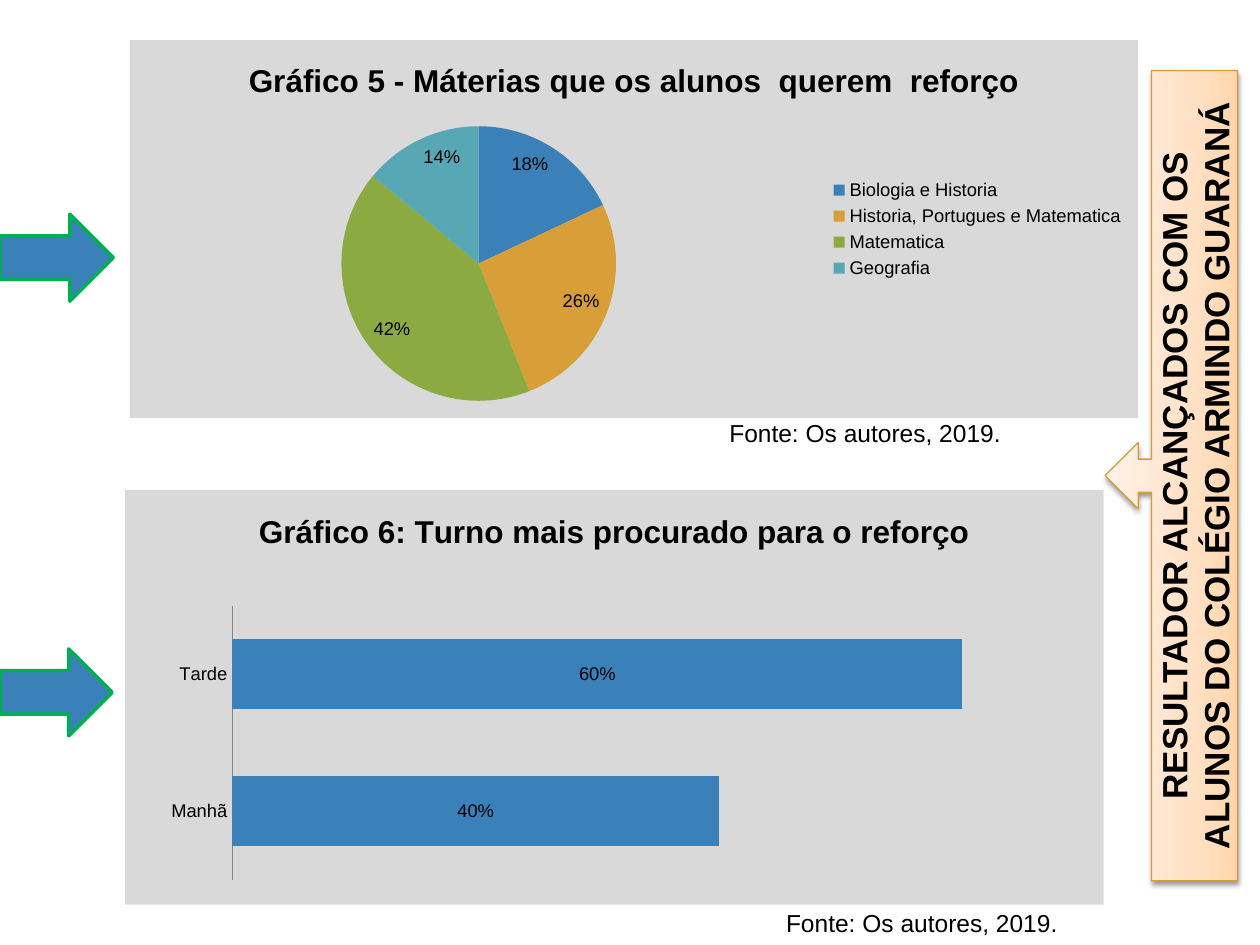
import copy
from dataclasses import dataclass

import lxml.etree
import pptx
import pptx.chart.data
import pptx.dml.color
import pptx.enum.chart
import pptx.enum.shapes
import pptx.enum.text
import pptx.oxml
import pptx.oxml.ns
import pptx.util

Pt = pptx.util.Pt
qn = pptx.oxml.ns.qn
Kind = pptx.enum.chart.XL_CHART_TYPE
Shape = pptx.enum.shapes.MSO_SHAPE
NAMESPACES = pptx.oxml.ns.nsdecls("a", "c")


@dataclass(frozen=True)
class Theme:
    font: str = "Arial"
    ink: str = "000000"
    outline: str = "0D0D0D"
    panel: str = "D9D9D9"
    axis: str = "868686"
    blue: str = "3A81BA"
    green: str = "00B050"
    border: str = "D79D34"
    slices: tuple = ("3A81BA", "D89F39", "8BAB42", "57A7B5")
    callout: tuple = ((0, "FFD6AD"), (0.35, "FFE1C5"), (1, "FFF3E9"))
    label: float = 10.5
    source: float = 14
    title: float = 18
    heading: float = 20


THEME = Theme()


def color(value):
    return pptx.dml.color.RGBColor.from_string(value)


def apply(target, values):
    for name, value in values.items():
        setattr(target, name, value)


def style_font(font, size, bold=False):
    apply(font, {"name": THEME.font, "size": Pt(size), "bold": bold})
    font.color.rgb = color(THEME.ink)


def paint(target, value):
    target.fill.solid()
    target.fill.fore_color.rgb = color(value)


def outline(shape, value, width):
    shape.line.color.rgb = color(value)
    shape.line.width = Pt(width)


def add_arrow(page, box):
    arrow = page.shapes.add_shape(Shape.RIGHT_ARROW, *map(Pt, box))
    arrow.shadow.inherit = False
    paint(arrow, THEME.blue)
    outline(arrow, THEME.green, 2)


def add_source(page, box):
    source = page.shapes.add_textbox(*map(Pt, box))
    source.text_frame.word_wrap = True
    source.text_frame.auto_size = pptx.enum.text.MSO_AUTO_SIZE.SHAPE_TO_FIT_TEXT
    span = source.text_frame.paragraphs[0].add_run()
    span.text = "Fonte: Os autores, 2019."
    style_font(span.font, THEME.source)


def add_chart(page, box, kind, title, values, number_format):
    data = pptx.chart.data.CategoryChartData(number_format=number_format)
    data.categories = list(values)
    data.add_series("Series 1", list(values.values()))
    chart = page.shapes.add_chart(kind, *map(Pt, box), data).chart
    style_font(chart.font, THEME.label)
    chart.has_title = True
    span = chart.chart_title.text_frame.paragraphs[0].add_run()
    span.text = title
    style_font(span.font, THEME.title, True)
    chart.chart_title.include_in_layout = False
    chart.has_legend = False
    background = pptx.oxml.parse_xml(
        f'<c:spPr {NAMESPACES}><a:solidFill><a:srgbClr val="{THEME.panel}"/></a:solidFill>'
        "<a:ln><a:noFill/></a:ln></c:spPr>"
    )
    chart._chartSpace.find(qn("c:chart")).addnext(background)
    plot = chart.plots[0]
    plot.has_data_labels = True
    apply(plot.data_labels, {"number_format": "0%", "number_format_is_linked": False})
    style_font(plot.data_labels.font, THEME.label)
    return chart


def set_plot_area(chart, area):
    plot_area = chart._chartSpace.find(".//" + qn("c:plotArea"))
    for old in plot_area.findall(qn("c:layout")):
        plot_area.remove(old)
    places = "".join(f'<c:{name} val="{value}"/>' for name, value in zip("xywh", area))
    plot_area.insert(0, pptx.oxml.parse_xml(
        f'<c:layout {NAMESPACES}><c:manualLayout><c:layoutTarget val="inner"/>'
        f'<c:xMode val="edge"/><c:yMode val="edge"/>{places}</c:manualLayout></c:layout>'
    ))


def add_subjects_panel(page, box):
    left, top, width, height = box
    add_arrow(page, (0, top + 99.4, left - 9.4, 49.7))
    add_source(page, (left + width - 240.5, top + height - 3.6, 220.3, 24.5))
    values = {"Biologia e Historia": 18, "Historia, Portugues e Matematica": 26,
              "Matematica": 42, "Geografia": 14}
    chart = add_chart(page, box, Kind.PIE,
                      "Gráfico 5 - Máterias que os alunos  querem  reforço", values, "General")
    chart.has_legend = True
    apply(chart.legend, {"position": pptx.enum.chart.XL_LEGEND_POSITION.RIGHT,
                         "include_in_layout": False})
    style_font(chart.legend.font, THEME.label)
    plot = chart.plots[0]
    plot.vary_by_categories = True
    apply(plot.data_labels, {"show_percentage": True, "show_value": False,
                             "position": pptx.enum.chart.XL_LABEL_POSITION.INSIDE_END})
    for index, value in enumerate(THEME.slices):
        paint(plot.series[0].points[index].format, value)


def add_shift_panel(page, box):
    left, top, width, height = box
    add_arrow(page, (0, top + 90.8, left - 7.2, 49.7))
    chart = add_chart(page, box, Kind.BAR_STACKED,
                      "Gráfico 6: Turno mais procurado para o reforço",
                      {"Manhã": 0.4, "Tarde": 0.6}, "0%")
    set_plot_area(chart, (0.11, 0.28, 0.87, 0.66))
    plot = chart.plots[0]
    apply(plot, {"gap_width": 95, "overlap": 100, "vary_by_categories": False})
    plot.data_labels.show_value = True
    paint(plot.series[0].format, THEME.blue)
    apply(chart.value_axis, {"visible": False, "has_major_gridlines": False,
                             "minimum_scale": 0, "maximum_scale": 0.7})
    apply(chart.category_axis, {"major_tick_mark": pptx.enum.chart.XL_TICK_MARK.NONE})
    outline(chart.category_axis.format, THEME.axis, 0.75)
    style_font(chart.category_axis.tick_labels.font, THEME.label)
    add_source(page, (left + width - 188.6, top + height - 1.4, 220.3, 24.5))


def add_heading(page, box):
    callout = page.shapes.add_shape(Shape.UP_ARROW_CALLOUT, *map(Pt, box))
    callout.rotation = 270
    callout.fill.gradient()
    callout.fill.gradient_angle = 90
    stops = callout._element.spPr.find(".//" + qn("a:gsLst"))
    stops.append(copy.deepcopy(stops[-1]))
    for stop, (position, value) in zip(callout.fill.gradient_stops, THEME.callout):
        stop.position = position
        stop.color.rgb = color(value)
    outline(callout, THEME.border, 0.75)
    callout.shadow.inherit = False
    callout._element.spPr.find(qn("a:effectLst")).append(pptx.oxml.parse_xml(
        f'<a:outerShdw {NAMESPACES} blurRad="{Pt(3.1)}" dist="{Pt(1.6)}" dir="5400000" '
        f'rotWithShape="0"><a:srgbClr val="{THEME.ink}"><a:alpha val="38000"/>'
        "</a:srgbClr></a:outerShdw>"
    ))
    frame = callout.text_frame
    apply(frame, {"word_wrap": True, "vertical_anchor": pptx.enum.text.MSO_ANCHOR.MIDDLE})
    para = frame.paragraphs[0]
    para.alignment = pptx.enum.text.PP_ALIGN.CENTER
    span = para.add_run()
    span.text = "RESULTADOR ALCANÇADOS COM OS ALUNOS DO COLÉGIO ARMINDO GUARANÁ"
    style_font(span.font, THEME.heading, True)
    span.font._element.insert(0, pptx.oxml.parse_xml(
        f'<a:ln {NAMESPACES} w="{Pt(0.75)}"><a:solidFill>'
        f'<a:srgbClr val="{THEME.outline}"/></a:solidFill></a:ln>'
    ))


def main():
    deck = pptx.Presentation()
    apply(deck, {"slide_width": Pt(720), "slide_height": Pt(540)})
    page = deck.slides.add_slide(deck.slide_layouts[6])
    add_subjects_panel(page, (74.2, 23, 576, 216))
    add_shift_panel(page, (71.3, 280, 559.4, 236.9))
    add_heading(page, (437.8, 234, 463, 75.6))
    deck.save("out.pptx")


if __name__ == "__main__":
    main()
